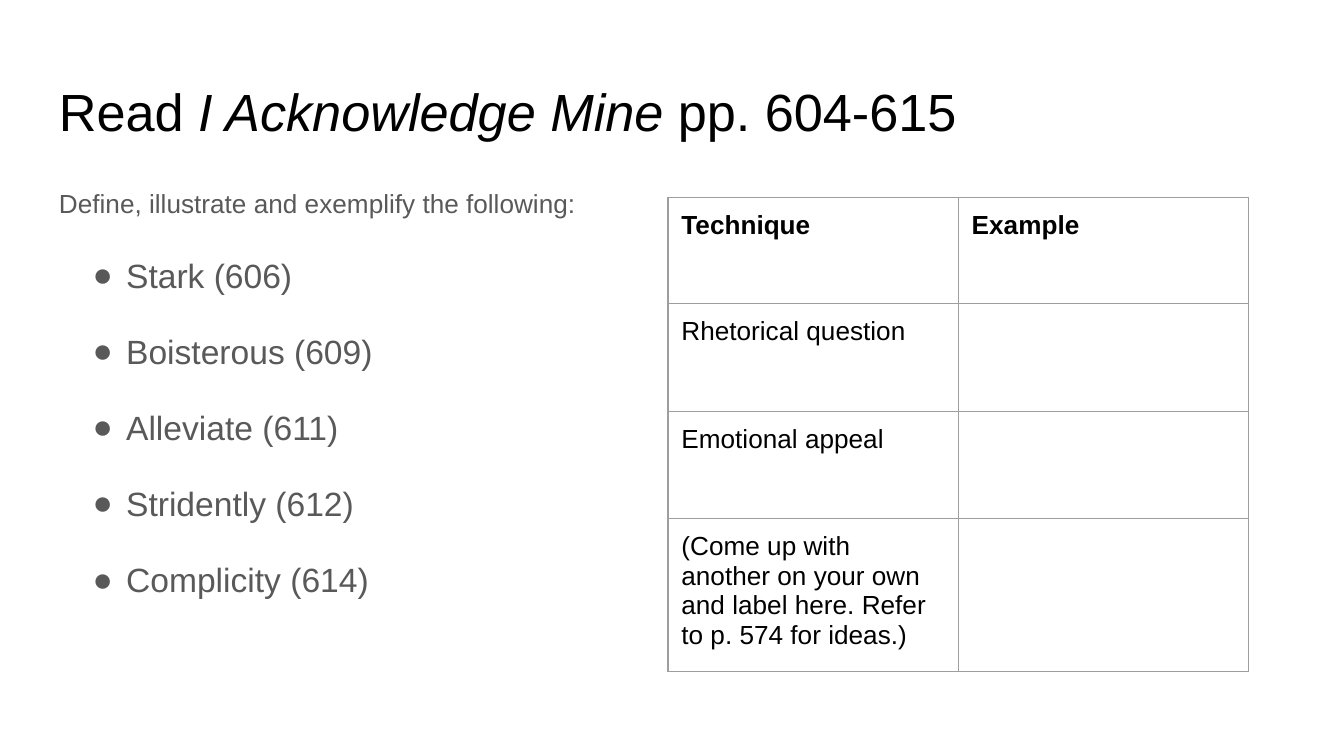
from lxml import etree
from pptx import Presentation
from pptx.dml.color import RGBColor
from pptx.oxml import parse_xml
from pptx.oxml.ns import nsdecls
from pptx.util import Inches, Pt

FONT = "Arial"
BLACK, GRAY, BORDER = "000000", "595959", "9E9E9E"


def style(font, size, color):
    font.name = FONT
    font.size = Pt(size)
    font.color.rgb = RGBColor.from_string(color)


def add_frame(top, height):
    """Add a full-width text box and return its text frame."""
    box = slide.shapes.add_textbox(Inches(0.34), Inches(top), Inches(9.32), Inches(height))
    frame = box.text_frame
    frame.word_wrap = True
    frame.margin_top = frame.margin_bottom = Inches(0.1)
    return frame


prs = Presentation()
prs.slide_width = Inches(10)
prs.slide_height = prs.slide_width * 9 // 16
slide = prs.slides.add_slide(prs.slide_layouts[6])

# Title
title = add_frame(0.49, 0.63).paragraphs[0]
style(title.font, 28, BLACK)
for words, italic in [("Read ", False), ("I Acknowledge Mine", True), (" pp. 604-615", False)]:
    run = title.add_run()
    run.text = words
    run.font.italic = italic

# Vocabulary list
vocabulary = add_frame(1.26, 3.74)
vocabulary.text = "\n".join([
    "Define, illustrate and exemplify the following:",
    "Stark (606)",
    "Boisterous (609)",
    "Alleviate (611)",
    "Stridently (612)",
    "Complicity (614)",
])
for i, line in enumerate(vocabulary.paragraphs):
    line.line_spacing = 1.15
    line.space_after = Pt(16)
    style(line.font, 18 if i else 14, GRAY)
    if i:
        props = line._p.get_or_add_pPr()
        props.set("marL", str(Inches(0.5)))
        props.set("indent", str(Inches(-0.25)))
        for bullet in (
            f'<a:buClr {nsdecls("a")}><a:srgbClr val="{GRAY}"/></a:buClr>',
            f'<a:buFont {nsdecls("a")} typeface="{FONT}"/>',
            f'<a:buChar {nsdecls("a")} char="●"/>',
        ):
            props.find("{*}defRPr").addprevious(parse_xml(bullet))

# Technique table: the last row grows to fit its text
rows = [
    ("Technique", "Example"),
    ("Rhetorical question", ""),
    ("Emotional appeal", ""),
    ("(Come up with another on your own and label here. Refer to p. 574 for ideas.)", ""),
]
table = slide.shapes.add_table(
    len(rows), 2, Inches(4.97), Inches(1.47), Inches(4.32), Inches(3.19)).table
for row, height in zip(table.rows, [0.79, 0.8, 0.8, 0.8]):
    row.height = Inches(height)
for r, texts in enumerate(rows):
    for c, words in enumerate(texts):
        cell = table.cell(r, c)
        cell.margin_left = cell.margin_right = Inches(0.1)
        cell.margin_top = cell.margin_bottom = Inches(0.1)
        cell.text = words
        entry = cell.text_frame.paragraphs[0]
        style(entry.font, 14, BLACK)
        entry.font.bold = r == 0
        cell_props = cell._tc.get_or_add_tcPr()
        for side in ("lnL", "lnR", "lnT", "lnB"):
            edge = parse_xml(
                f'<a:{side} {nsdecls("a")} w="{Pt(0.75)}"><a:solidFill>'
                f'<a:srgbClr val="{BORDER}"/></a:solidFill></a:{side}>')
            cell_props.append(edge)
        etree.SubElement(cell_props, edge.tag.replace("lnB", "noFill"))

prs.save("out.pptx")
